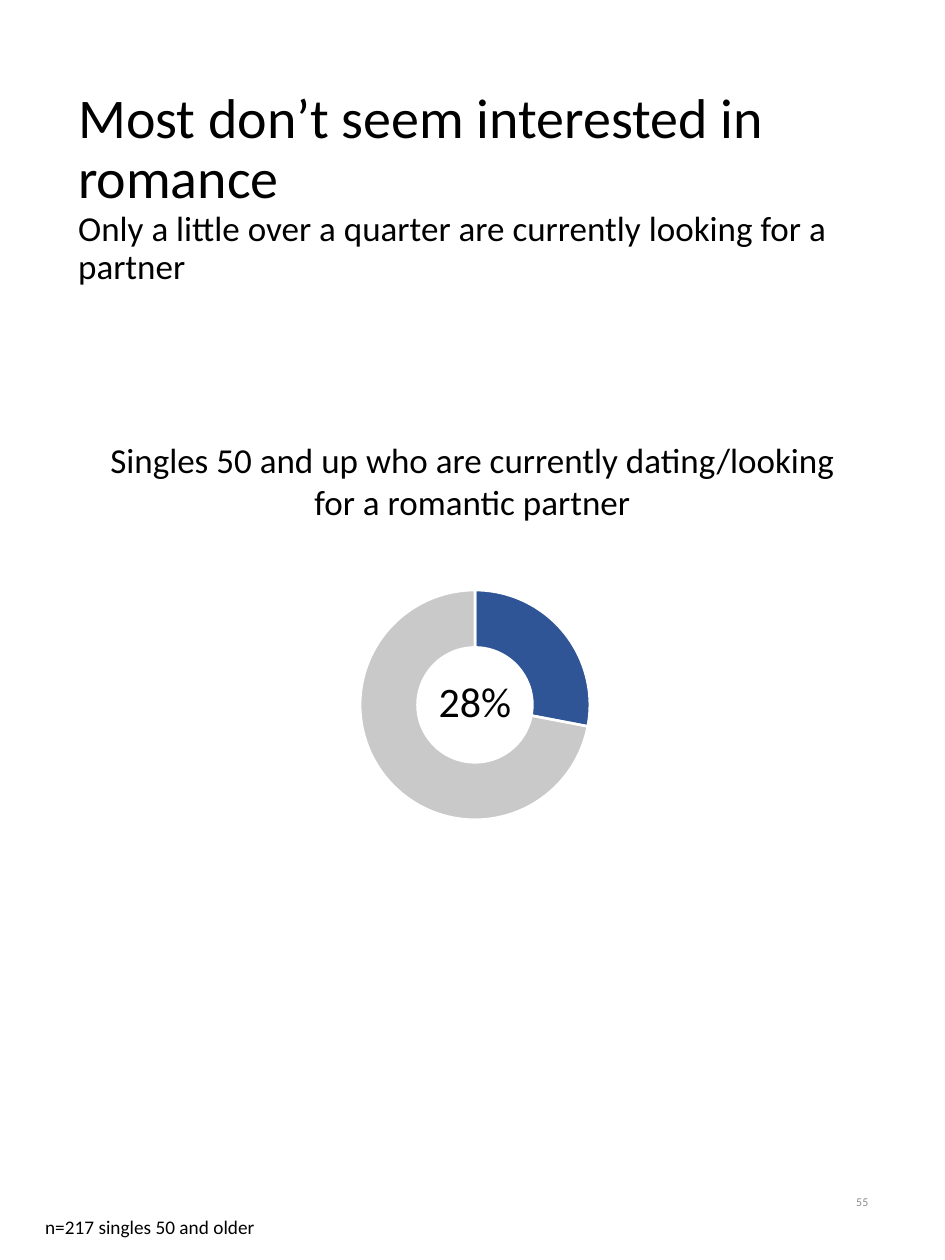
from lxml.etree import SubElement
from pptx import Presentation
from pptx.chart.data import CategoryChartData
from pptx.dml.color import RGBColor
from pptx.enum.chart import XL_CHART_TYPE
from pptx.enum.text import MSO_ANCHOR, MSO_AUTO_SIZE, PP_ALIGN
from pptx.oxml import parse_xml
from pptx.oxml.ns import nsdecls, qn
from pptx.util import Inches, Pt


def color(value):
    return RGBColor.from_string(value)


def write(shape, text, size=20, fill="000000", align=PP_ALIGN.LEFT, anchor=MSO_ANCHOR.TOP):
    frame = shape.text_frame
    frame.word_wrap = True
    frame.auto_size = MSO_AUTO_SIZE.NONE
    frame.vertical_anchor = anchor
    paragraph = frame.paragraphs[0]
    paragraph.alignment = align
    run = paragraph.add_run()
    run.text = text
    run.font.name = "Calibri"
    run.font.size = Pt(size)
    run.font.color.rgb = color(fill)
    return paragraph


presentation = Presentation()
presentation.slide_width = Inches(7.5)
presentation.slide_height = Inches(10)
slide = presentation.slides.add_slide(presentation.slide_layouts[5])

title = slide.shapes.title
title.left, title.top = Inches(0.52), Inches(0.53)
title.width, title.height = Inches(6.47), Inches(1.93)
paragraph = write(title, "Most don’t seem interested in romance", size=32, anchor=MSO_ANCHOR.MIDDLE)
paragraph.line_spacing = 0.9
paragraph.add_line_break()
line_break = paragraph._p.find(qn("a:br"))
SubElement(line_break, qn("a:rPr"), sz="3200")
write(title, "Only a little over a quarter are currently looking for a partner", anchor=MSO_ANCHOR.MIDDLE)

chart_data = CategoryChartData()
chart_data.categories = ["1", "2"]
chart_data.add_series("Series 1", (28, 72))
chart = slide.shapes.add_chart(
    XL_CHART_TYPE.DOUGHNUT, Inches(2.25), Inches(4.53), Inches(3.04), Inches(2.11), chart_data
).chart
chart.has_title = False
chart.has_legend = False
chart.font.name = "Calibri"
chart.font.size = Pt(10)
chart.font.color.rgb = color("000000")
plot = chart.plots[0]
plot.vary_by_categories = True
plot._element.find(qn("c:holeSize")).set("val", "64")
for index, fill in enumerate(["2F5597", "C9C9C9"]):
    point_format = plot.series[0].points[index].format
    point_format.fill.solid()
    point_format.fill.fore_color.rgb = color(fill)
    point_format.line.color.rgb = color("FFFFFF")
    point_format.line.width = Pt(1.5)

plot_area = chart._chartSpace.chart.plotArea
for layout in plot_area.findall(qn("c:layout")):
    plot_area.remove(layout)
plot_area.insert(0, parse_xml(
    f'<c:layout {nsdecls("c")}><c:manualLayout><c:layoutTarget val="inner"/>'
    '<c:xMode val="edge"/><c:yMode val="edge"/><c:x val="0.2"/><c:y val="0.07"/>'
    '<c:w val="0.6"/><c:h val="0.87"/></c:manualLayout></c:layout>'
))

labels = [
    ("55", 5.3, 9.27, 1.69, 0.53,
     dict(size=6.8, fill="8C8C8C", align=PP_ALIGN.RIGHT, anchor=MSO_ANCHOR.MIDDLE)),
    ("28%", 3.34, 5.31, 0.86, 0.63, dict(size=24, align=PP_ALIGN.CENTER)),
    ("Singles 50 and up who are currently dating/looking for a romantic partner",
     0.73, 3.43, 6.04, 0.77, dict(align=PP_ALIGN.CENTER)),
    ("n=217 singles 50 and older", 0.26, 9.6, 6.98, 0.47, dict(size=11)),
]
for text, left, top, width, height, text_format in labels:
    box = slide.shapes.add_textbox(Inches(left), Inches(top), Inches(width), Inches(height))
    write(box, text, **text_format)

presentation.save("out.pptx")
